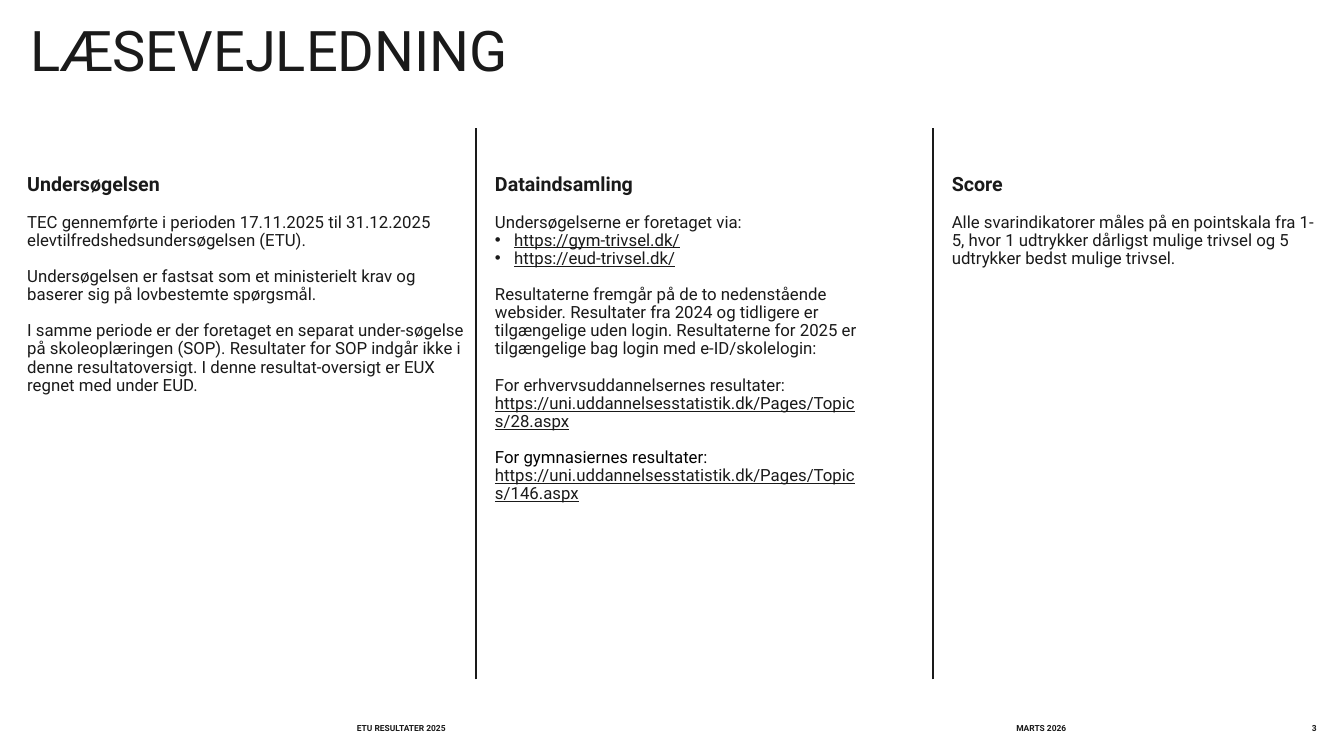
from lxml import etree
from pptx import Presentation
from pptx.dml.color import RGBColor
from pptx.enum.shapes import MSO_CONNECTOR
from pptx.enum.text import MSO_ANCHOR, PP_ALIGN
from pptx.oxml.ns import qn
from pptx.util import Inches, Pt

TOP, MIDDLE = MSO_ANCHOR.TOP, MSO_ANCHOR.MIDDLE
LEFT, RIGHT = PP_ALIGN.LEFT, PP_ALIGN.RIGHT
STRAIGHT = MSO_CONNECTOR.STRAIGHT

INK = RGBColor(0x1A, 0x1A, 0x1A)
BLACK = RGBColor(0, 0, 0)
FONT = "Roboto"
BODY_SIZE = 12
BODY_SPACING = 0.9
GAP = 12.9  # one body line, in points
BULLET_INDENT = 0.19

TITLE = "LÆSEVEJLEDNING"


def run(text, **fmt):
    return text, fmt


def para(*runs, **fmt):
    return runs, fmt


def heading(text):
    return para(run(text, size=14, bold=True))


def link(address):
    return run(address, underline=True)


# left, width, height, paragraphs
COLUMNS = [
    (0.27, 4.34, 5.62, [
        heading("Undersøgelsen"),
        para(run("TEC gennemførte i perioden 17.11.2025 til 31.12.2025 "
                 "elevtilfredshedsundersøgelsen (ETU)."), before=GAP),
        para(run("Undersøgelsen er fastsat som et ministerielt krav og "
                 "baserer sig på lovbestemte spørgsmål."), before=GAP),
        para(run("I samme periode er der foretaget en separat under-søgelse "
                 "på skoleoplæringen (SOP). Resultater for SOP indgår ikke i "
                 "denne resultatoversigt. I denne resultat-oversigt er EUX "
                 "regnet med under EUD."), before=GAP),
    ]),
    (4.91, 3.63, 4.96, [
        heading("Dataindsamling"),
        para(run("Undersøgelserne er foretaget via:"), before=GAP),
        para(link("https://gym-trivsel.dk/"), bullet=True),
        para(link("https://eud-trivsel.dk/"), bullet=True),
        para(run("Resultaterne fremgår på de to nedenstående websider. "
                 "Resultater fra 2024 og tidligere er tilgængelige uden "
                 "login. Resultaterne for 2025 er tilgængelige bag login "
                 "med e-ID/skolelogin:"), before=GAP),
        para(run("For erhvervsuddannelsernes resultater: "),
             link("https://uni.uddannelsesstatistik.dk/Pages/Topics/28.aspx"),
             before=GAP),
        para(run("For gymnasiernes resultater: ", color=BLACK),
             link("https://uni.uddannelsesstatistik.dk/Pages/Topics/146.aspx"),
             before=GAP),
    ]),
    (9.44, 3.63, 4.96, [
        heading("Score"),
        para(run("Alle svarindikatorer måles på en pointskala fra 1-5, hvor 1 "
                 "udtrykker dårligst mulige trivsel og 5 udtrykker bedst "
                 "mulige trivsel."), before=GAP),
    ]),
]
COLUMN_TOP = 1.73

DIVIDERS = [4.72, 9.25]
DIVIDER_TOP, DIVIDER_BOTTOM = 1.27, 6.74

# left, width, text, alignment
FOOTERS = [
    (3.54, 4.41, "ETU RESULTATER 2025", LEFT),
    (10.08, 1.49, "MARTS 2026", LEFT),
    (12.36, 0.7, "3", RIGHT),
]
FOOTER_TOP, FOOTER_HEIGHT = 7.15, 0.15


def add_bullet(p):
    pPr = p._p.get_or_add_pPr()
    pPr.set("marL", str(Inches(BULLET_INDENT)))
    pPr.set("indent", str(-Inches(BULLET_INDENT)))
    etree.SubElement(pPr, qn("a:buFont")).set("typeface", "Arial")
    etree.SubElement(pPr, qn("a:buChar")).set("char", "•")


def add_text(slide, box, paragraphs, spacing=1.0, anchor=TOP, align=LEFT):
    tb = slide.shapes.add_textbox(*map(Inches, box))
    tf = tb.text_frame
    tf.word_wrap = True
    tf.vertical_anchor = anchor
    tf.margin_left = tf.margin_right = tf.margin_top = tf.margin_bottom = 0
    for i, (runs, fmt) in enumerate(paragraphs):
        p = tf.add_paragraph() if i else tf.paragraphs[0]
        if fmt.get("bullet"):
            add_bullet(p)
        p.alignment = align
        p.line_spacing = spacing
        p.space_before = Pt(fmt.get("before", 0))
        for text, look in runs:
            r = p.add_run()
            r.text = text
            r.font.name = FONT
            r.font.size = Pt(look.get("size", BODY_SIZE))
            r.font.bold = look.get("bold", False)
            r.font.underline = look.get("underline", False)
            r.font.color.rgb = look.get("color", INK)


def add_divider(slide, x):
    line = slide.shapes.add_connector(
        STRAIGHT, Inches(x), Inches(DIVIDER_BOTTOM), Inches(x), Inches(DIVIDER_TOP))
    line.line.color.rgb = INK
    line.line.width = Pt(1.5)
    etree.SubElement(line._element.spPr, qn("a:effectLst"))


def main():
    prs = Presentation()
    prs.slide_width, prs.slide_height = Inches(13.33), Inches(7.5)
    slide = prs.slides.add_slide(prs.slide_layouts[6])

    add_text(slide, (0.3, 0.28, 12.76, 0.99), [para(run(TITLE, size=40))], spacing=0.8)
    for left, width, height, paragraphs in COLUMNS:
        add_text(slide, (left, COLUMN_TOP, width, height), paragraphs, BODY_SPACING)
    for x in DIVIDERS:
        add_divider(slide, x)
    for left, width, text, align in FOOTERS:
        add_text(slide, (left, FOOTER_TOP, width, FOOTER_HEIGHT),
                 [para(run(text, size=6, bold=True))], anchor=MIDDLE, align=align)

    prs.save("out.pptx")


if __name__ == "__main__":
    main()
